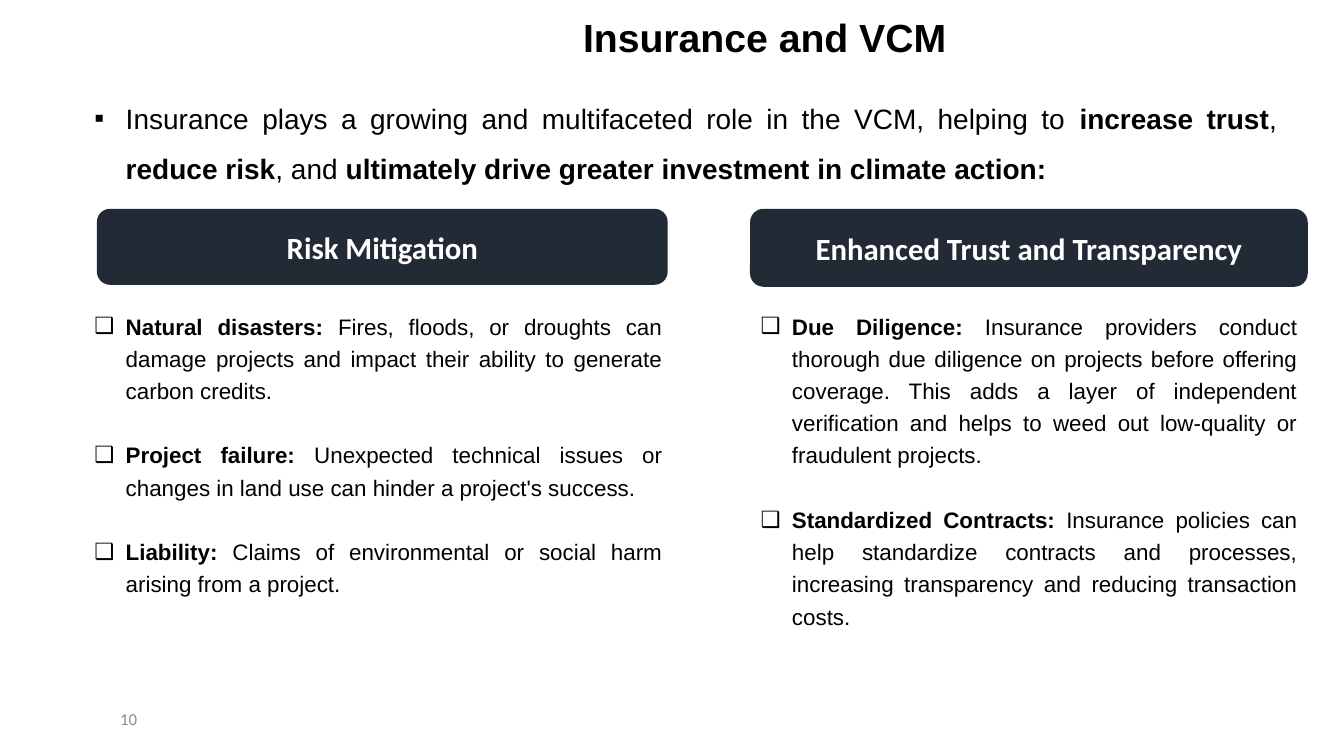
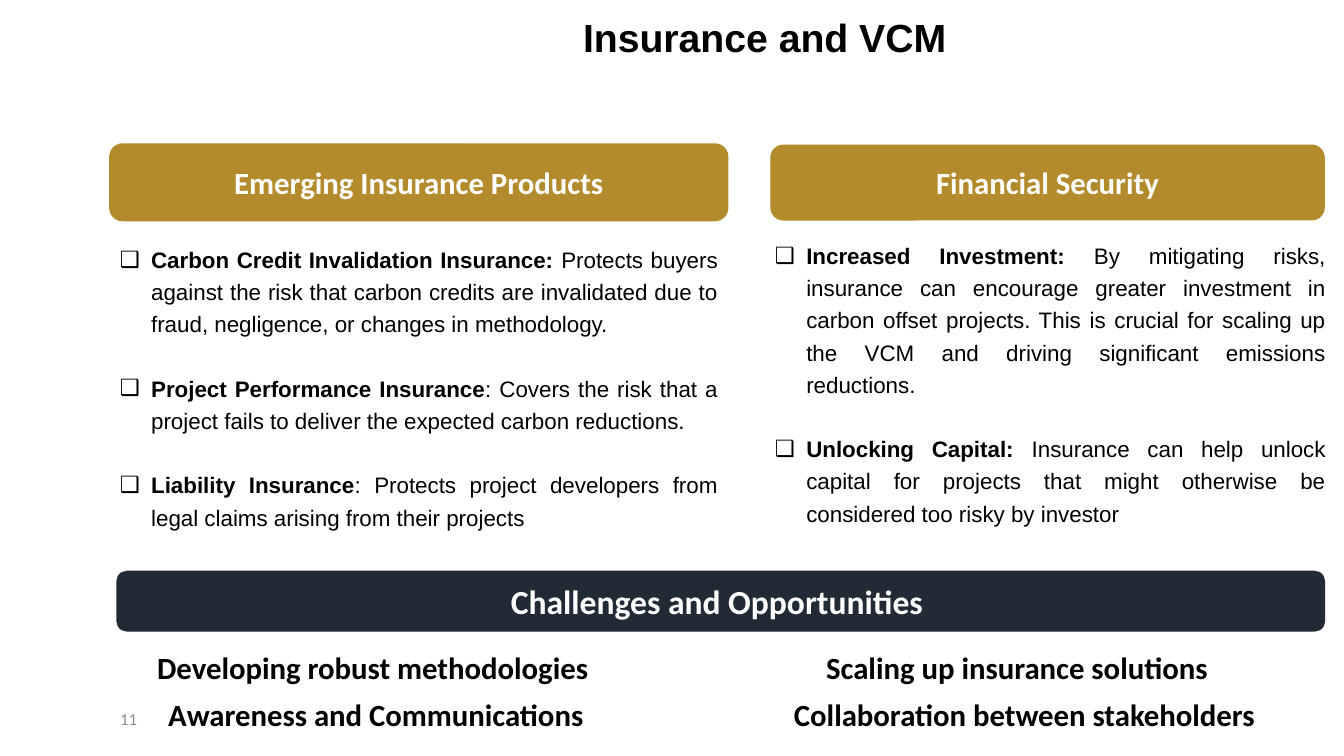
from lxml.etree import SubElement
from pptx import Presentation
from pptx.dml.color import RGBColor
from pptx.enum.shapes import MSO_SHAPE as Shape
from pptx.enum.text import MSO_ANCHOR as Anchor, MSO_AUTO_SIZE as AutoSize, PP_ALIGN as Align
from pptx.oxml.ns import qn
from pptx.util import Cm, Pt

COLORS = {"navy": "222A35", "gold": "B48B2C", "text": "000000",
          "white": "FFFFFF", "number": "8C8C8C"}
HEADING_FONT, BODY_FONT = "Calibri", "Arial"
BULLET_INDENT = Cm(0.79)
ITEM_GAP = Pt(23)  # one empty line between list items


def color(name):
    return RGBColor.from_string(COLORS[name])


def add_run(paragraph, text, size, font=BODY_FONT, fill="text", bold=False):
    run = paragraph.add_run()
    run.text = text
    run.font.name = font
    run.font.size = Pt(size)
    run.font.bold = bold
    run.font.color.rgb = color(fill)


def add_text_frame(slide, box, anchor=Anchor.TOP):
    frame = slide.shapes.add_textbox(*map(Cm, box)).text_frame
    frame.word_wrap = True
    frame.auto_size = AutoSize.SHAPE_TO_FIT_TEXT
    frame.vertical_anchor = anchor
    return frame


def set_bullet(paragraph, character):
    properties = paragraph._p.get_or_add_pPr()
    properties.set("marL", str(BULLET_INDENT))
    properties.set("indent", str(-BULLET_INDENT))
    SubElement(properties, qn("a:buFont"), typeface=BODY_FONT)
    SubElement(properties, qn("a:buChar"), char=character)


def add_bullets(slide, box, items, size=16, character="❑", line_spacing=1.2):
    """Each item is a list of (text, bold) pairs."""
    frame = add_text_frame(slide, box)
    for index, item in enumerate(items):
        paragraph = frame.add_paragraph() if index else frame.paragraphs[0]
        set_bullet(paragraph, character)
        paragraph.alignment = Align.JUSTIFY
        paragraph.line_spacing = line_spacing
        if index:
            paragraph.space_before = ITEM_GAP
        for text, bold in item:
            add_run(paragraph, text, size, bold=bold)


def add_topics(slide, box, topics):
    """Each topic is a bold lead followed by its plain explanation."""
    add_bullets(slide, box, [[(lead, True), (rest, False)] for lead, rest in topics])


def add_banner(slide, box, text, fill, size=22):
    shape = slide.shapes.add_shape(Shape.ROUNDED_RECTANGLE, *map(Cm, box))
    shape.shadow.inherit = False
    shape.fill.solid()
    shape.fill.fore_color.rgb = color(fill)
    shape.line.color.rgb = color(fill)
    shape.line.width = Pt(1)
    shape.text_frame.vertical_anchor = Anchor.MIDDLE
    paragraph = shape.text_frame.paragraphs[0]
    paragraph.alignment = Align.CENTER
    add_run(paragraph, text, size, HEADING_FONT, "white", True)


def add_label(slide, box, text):
    paragraph = add_text_frame(slide, box).paragraphs[0]
    add_run(paragraph, text, 22, HEADING_FONT, bold=True)


def add_slide(presentation, number):
    """Blank slide with the shared title and slide number."""
    slide = presentation.slides.add_slide(presentation.slide_layouts[6])
    title = add_text_frame(slide, (11.28, 0.2, 15.98, 1.45)).paragraphs[0]
    title.alignment = Align.CENTER
    add_run(title, "Insurance and VCM", 28, bold=True)
    frame = add_text_frame(slide, (1.17, 17.6, 2.54, 1.02), Anchor.MIDDLE)
    frame.auto_size = AutoSize.NONE
    frame.paragraphs[0].alignment = Align.RIGHT
    add_run(frame.paragraphs[0], str(number), 12, HEADING_FONT, "number")
    return slide


def build_role_slide(presentation):
    slide = add_slide(presentation, 10)

    # Introduction
    add_bullets(slide, (2.13, 2.01, 30.3, 2.67), [[
        ("Insurance plays a growing and multifaceted role in the VCM, helping to ", False),
        ("increase trust", True), (", ", False), ("reduce risk", True), (", and ", False),
        ("ultimately drive greater investment in climate action:", True),
    ]], size=20, character="▪", line_spacing=1.5)

    # Left column
    add_banner(slide, (2.46, 5.28, 14.35, 1.88), "Risk Mitigation", "navy")
    add_topics(slide, (2.13, 7.62, 14.81, 7.57), [
        ("Natural disasters:", " Fires, floods, or droughts can damage projects and impact "
         "their ability to generate carbon credits."),
        ("Project failure:", " Unexpected technical issues or changes in land use can hinder "
         "a project's success."),
        ("Liability:", " Claims of environmental or social harm arising from a project."),
    ])

    # Right column
    add_banner(slide, (18.92, 5.28, 14.02, 1.93), "Enhanced Trust and Transparency", "navy")
    add_topics(slide, (18.92, 7.62, 14.02, 8.38), [
        ("Due Diligence: ", "Insurance providers conduct thorough due diligence on projects "
         "before offering coverage. This adds a layer of independent verification and helps "
         "to weed out low-quality or fraudulent projects."),
        ("Standardized Contracts: ", "Insurance policies can help standardize contracts and "
         "processes, increasing transparency and reducing transaction costs."),
    ])


def build_products_slide(presentation):
    slide = add_slide(presentation, 11)

    # Left column
    add_banner(slide, (2.77, 3.63, 15.57, 1.93), "Emerging Insurance Products", "gold")
    add_topics(slide, (2.77, 5.94, 15.57, 7.57), [
        ("Carbon Credit Invalidation Insurance: ", "Protects buyers against the risk that "
         "carbon credits are invalidated due to fraud, negligence, or changes in methodology."),
        ("Project Performance Insurance", ": Covers the risk that a project fails to deliver "
         "the expected carbon reductions."),
        ("Liability Insurance", ": Protects project developers from legal claims arising from "
         "their projects"),
    ])

    # Right column
    add_banner(slide, (19.43, 3.66, 13.94, 1.88), "Financial Security", "gold")
    add_topics(slide, (19.28, 5.84, 14.38, 7.57), [
        ("Increased Investment: ", "By mitigating risks, insurance can encourage greater "
         "investment in carbon offset projects. This is crucial for scaling up the VCM and "
         "driving significant emissions reductions."),
        ("Unlocking Capital: ", "Insurance can help unlock capital for projects that might "
         "otherwise be considered too risky by investor"),
    ])

    # Challenges and opportunities
    add_banner(slide, (2.95, 14.4, 30.43, 1.5), "Challenges and Opportunities ", "navy", 24)
    for left, top, width, text in [
        (3.71, 16.21, 13.72, "Developing robust methodologies"),
        (20.57, 16.21, 11.63, "Scaling up insurance solutions"),
        (3.99, 17.4, 13.72, "Awareness and Communications"),
        (19.76, 17.4, 14.1, "Collaboration between stakeholders"),
    ]:
        add_label(slide, (left, top, width, 1.19), text)


def main():
    presentation = Presentation()
    presentation.slide_width, presentation.slide_height = Cm(33.87), Cm(19.05)
    build_role_slide(presentation)
    build_products_slide(presentation)
    presentation.save("out.pptx")


if __name__ == "__main__":
    main()
